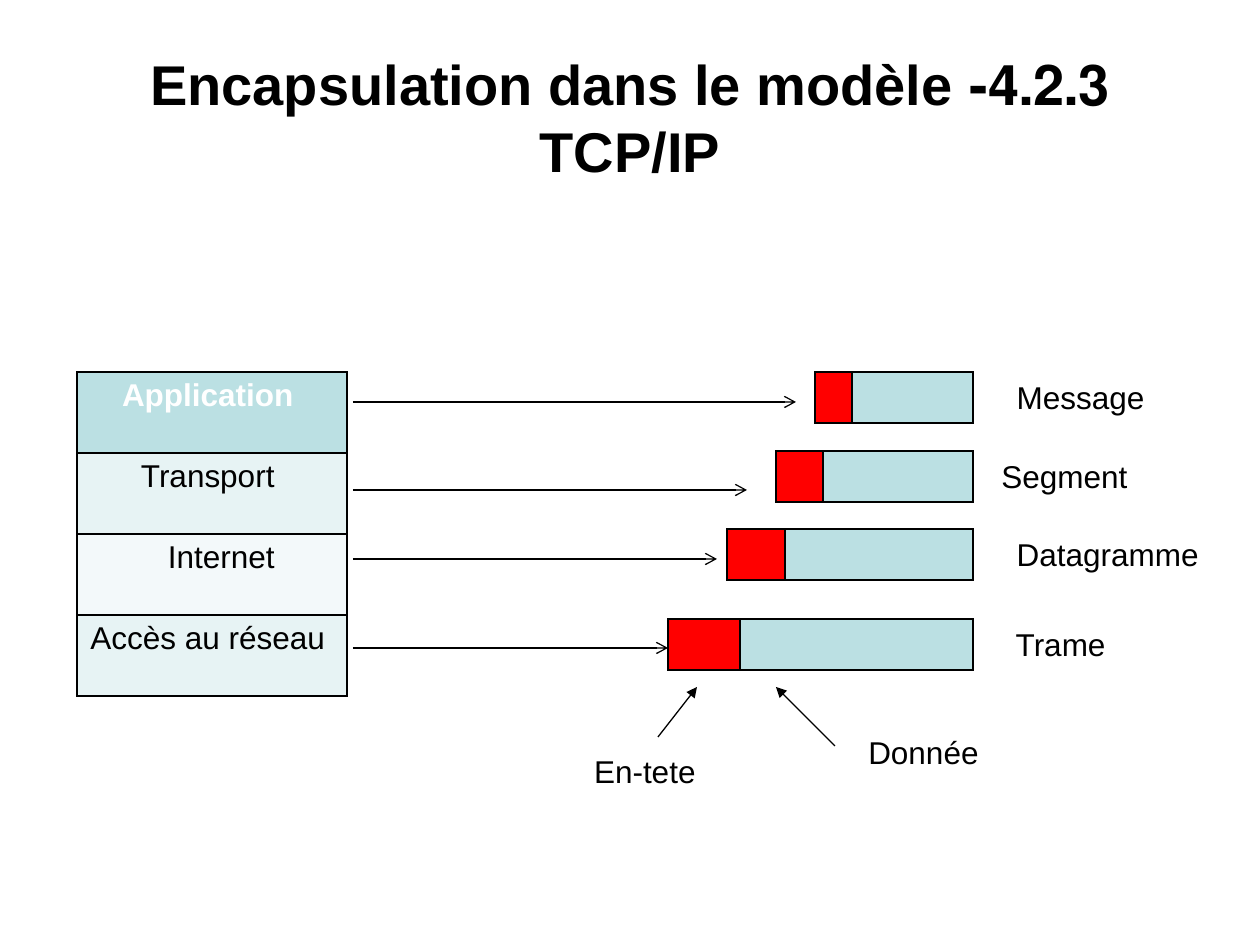
from dataclasses import dataclass

import pptx
import pptx.dml.color
import pptx.enum.shapes
import pptx.enum.text
import pptx.oxml
import pptx.oxml.ns
import pptx.util

PX_PER_INCH = 126
ALIGN = pptx.enum.text.PP_ALIGN
BLACK, WHITE, RED, TEAL = "000000", "FFFFFF", "FF0000", "BBE0E3"
PALE, PALER = "E7F3F4", "F3F9FA"


@dataclass
class Layer:
    name: str
    fill: str
    color: str = BLACK
    bold: bool = False
    align: int = ALIGN.CENTER
    indent: int = 13


@dataclass
class Unit:
    """A data unit: its header and data cells, its arrow and its label."""
    name: str
    top: int
    left: int
    header_width: int
    arrow_y: int
    arrow_end: int
    label_left: int
    label_width: int


LAYERS = [
    Layer("Application ", TEAL, color=WHITE, bold=True),
    Layer("Transport ", PALE),
    Layer("Internet ", PALER, align=ALIGN.LEFT, indent=91),
    Layer("Accès au réseau ", PALE),
]
UNITS = [
    Unit("Message ", 372, 815, 37, 402, 796, 993, 164),
    Unit("Segment", 451, 776, 47, 490, 747, 988, 152),
    Unit("Datagramme ", 529, 727, 58, 559, 717, 993, 218),
    Unit("Trame ", 619, 668, 72, 648, 668, 993, 125),
]
STACK_LEFT, STACK_TOP, STACK_WIDTH, LAYER_HEIGHT = 77, 372, 270, 81
UNIT_RIGHT, UNIT_HEIGHT = 973, 51
ARROW_START, LABEL_HEIGHT = 353, 50


def px(length: int) -> pptx.util.Emu:
    return pptx.util.Emu(round(length * 914400 / PX_PER_INCH))


def rgb(color: str) -> pptx.dml.color.RGBColor:
    return pptx.dml.color.RGBColor.from_string(color)


def write(frame, text: str, *, size: int = 18, color: str = BLACK,
          bold: bool = False, align: int = ALIGN.RIGHT, rtl: bool = True) -> None:
    para = frame.paragraphs[0]
    para.alignment = align
    if rtl:
        para._p.get_or_add_pPr().set("rtl", "1")
    span = para.add_run()
    span.text = text
    span.font.name = "Arial"
    span.font.size = pptx.util.Pt(size)
    span.font.bold = bold
    span.font.color.rgb = rgb(color)


def add_label(page, text: str, left: int, top: int, width: int,
              wrap: bool = False) -> None:
    box = page.shapes.add_textbox(px(left), px(top), px(width), px(LABEL_HEIGHT))
    box.text_frame.word_wrap = wrap
    box.text_frame.auto_size = pptx.enum.text.MSO_AUTO_SIZE.SHAPE_TO_FIT_TEXT
    write(box.text_frame, text)


def add_arrow(page, start: tuple[int, int], end: tuple[int, int],
              head: str = "arrow") -> None:
    arrow = page.shapes.add_connector(
        pptx.enum.shapes.MSO_CONNECTOR.STRAIGHT, *map(px, start + end))
    arrow.line.color.rgb = rgb(BLACK)
    arrow.line.width = pptx.util.Pt(0.75)
    line = arrow.line._get_or_add_ln()
    pptx.oxml.ns.qn("a:tailEnd")
    line.append(pptx.oxml.parse_xml(
        f'<a:tailEnd {pptx.oxml.ns.nsdecls("a")} type="{head}"/>'))
    arrow._element.spPr.append(pptx.oxml.parse_xml(
        f'<a:effectLst {pptx.oxml.ns.nsdecls("a")}/>'))


def format_cell(cell, fill: str) -> None:
    """Give a cell a black border of one point and a plain fill."""
    properties = cell._tc.get_or_add_tcPr()
    for side in "LRTB":
        properties.append(pptx.oxml.parse_xml(
            f'<a:ln{side} {pptx.oxml.ns.nsdecls("a")} w="12700"><a:solidFill>'
            f'<a:srgbClr val="{BLACK}"/></a:solidFill></a:ln{side}>'))
    cell.fill.solid()
    cell.fill.fore_color.rgb = rgb(fill)


def add_grid(page, left: int, top: int, widths: list[int], row_height: int,
             fills: list[list[str]]):
    grid = page.shapes.add_table(
        len(fills), len(widths), px(left), px(top),
        px(sum(widths)), px(row_height * len(fills))).table
    grid.first_row = grid.horz_banding = False
    for column, width in zip(grid.columns, widths):
        column.width = px(width)
    for row, row_fills in zip(grid.rows, fills):
        row.height = px(row_height)
        for cell, fill in zip(row.cells, row_fills):
            format_cell(cell, fill)
    return grid


def add_title(page, text: str) -> None:
    title = page.shapes.title
    title.left, title.top, title.width, title.height = map(px, (63, 38, 1134, 157))
    title.text_frame.vertical_anchor = pptx.enum.text.MSO_ANCHOR.MIDDLE
    title.text_frame.auto_size = pptx.enum.text.MSO_AUTO_SIZE.NONE
    write(title.text_frame, text, size=32, bold=True, align=ALIGN.CENTER)


def add_stack(page) -> None:
    grid = add_grid(page, STACK_LEFT, STACK_TOP, [STACK_WIDTH], LAYER_HEIGHT,
                    [[layer.fill] for layer in LAYERS])
    for row, layer in enumerate(LAYERS):
        cell = grid.cell(row, 0)
        cell.margin_left = px(layer.indent)
        write(cell.text_frame, layer.name, color=layer.color, bold=layer.bold,
              align=layer.align, rtl=False)


def add_unit(page, unit: Unit) -> None:
    data_width = UNIT_RIGHT - unit.left - unit.header_width
    add_grid(page, unit.left, unit.top, [unit.header_width, data_width],
             UNIT_HEIGHT, [[RED, TEAL]])
    add_label(page, unit.name, unit.label_left, unit.top, unit.label_width)
    add_arrow(page, (ARROW_START, unit.arrow_y), (unit.arrow_end, unit.arrow_y))


def main() -> None:
    deck = pptx.Presentation()
    deck.slide_width, deck.slide_height = px(1260), px(945)
    page = deck.slides.add_slide(deck.slide_layouts[5])
    add_title(page, "4.2.3- Encapsulation dans le modèle TCP/IP")

    # Layers of the model, and the data unit of each
    add_stack(page)
    for unit in UNITS:
        add_unit(page, unit)

    # Names of the two parts of a unit
    add_arrow(page, (658, 737), (697, 687), head="triangle")
    add_label(page, "En-tete ", 530, 746, 178, wrap=True)
    add_arrow(page, (835, 746), (776, 687), head="triangle")
    add_label(page, "Donnée ", 845, 727, 146)

    deck.save("out.pptx")


if __name__ == "__main__":
    main()
